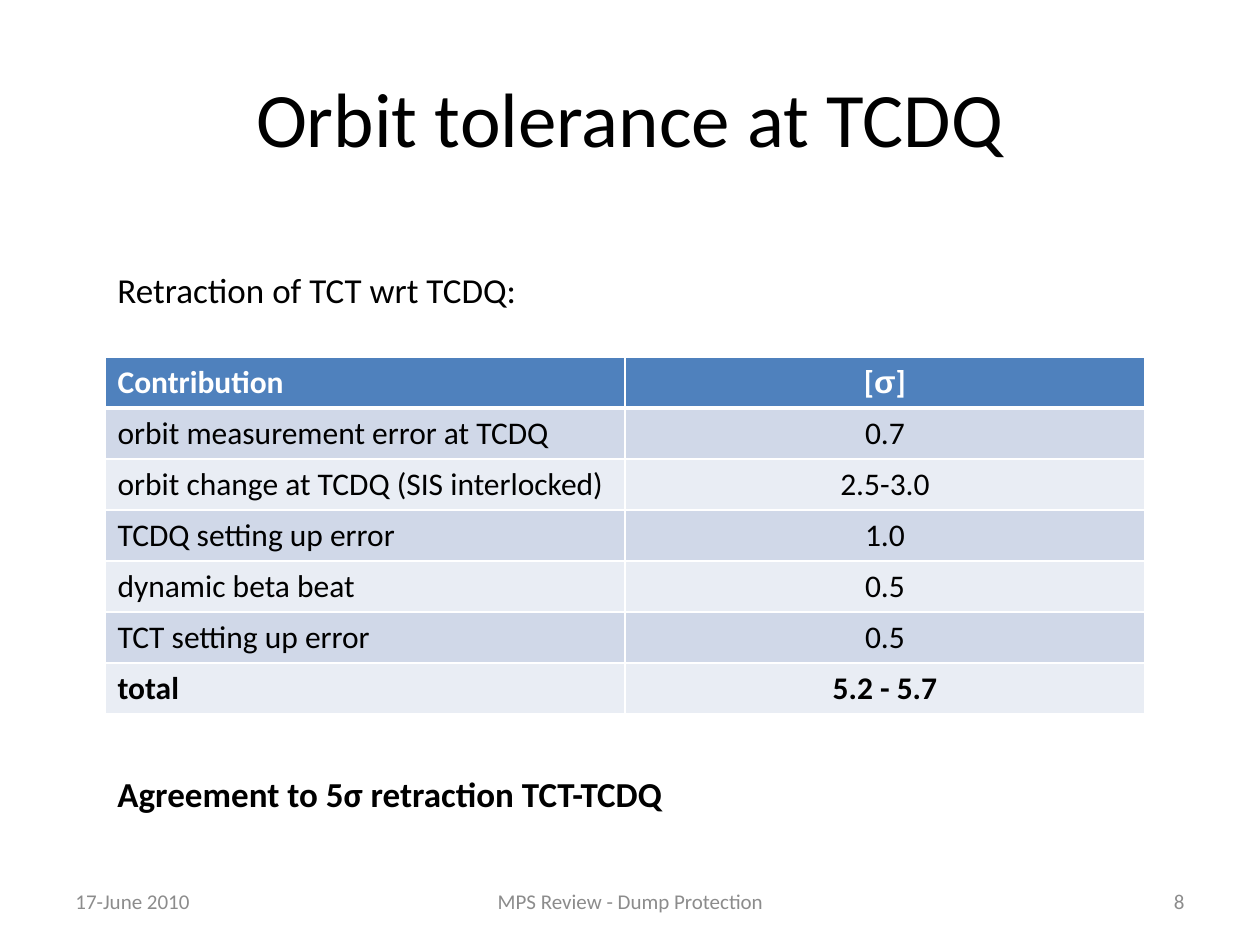
import pptx
import pptx.util
import pptx.dml.color
import pptx.enum.text
import pptx.oxml
import pptx.oxml.ns
import lxml.etree

ALIGN = pptx.enum.text.PP_ALIGN
ANCHOR = pptx.enum.text.MSO_ANCHOR

# Content
TITLE = "Orbit tolerance at TCDQ"
INTRO = "Retraction of TCT wrt TCDQ:"
CONCLUSION = "Agreement to 5σ retraction TCT-TCDQ"
ROWS = [
    ("Contribution", "[σ]"),
    ("orbit measurement error at TCDQ", "0.7"),
    ("orbit change at TCDQ (SIS interlocked)", "2.5-3.0"),
    ("TCDQ setting up error", "1.0"),
    ("dynamic beta beat", "0.5"),
    ("TCT setting up error", "0.5"),
    ("total", "5.2 - 5.7"),
]
# Footer: text, left, width, alignment
FOOTER = [
    ("17-June 2010", 63, 294, ALIGN.LEFT),
    ("MPS Review - Dump Protection", 431, 399, ALIGN.CENTER),
    ("8", 903, 294, ALIGN.RIGHT),
]

THEME = {
    "font": "Calibri", "symbol_font": "Arial",
    "ink": "000000", "muted": "8C8C8C", "white": "FFFFFF",
    "header": "4F81BD", "bands": ("E9EDF4", "D0D8E8"),
    "title": 44, "body": 20, "cell": 18, "footer": 12,
}

# Layout in px, 126 to the inch
SLIDE_WIDTH, SLIDE_HEIGHT = 1260, 945
TABLE_LEFT, TABLE_TOP = 105, 357
COLUMN_WIDTH, ROW_HEIGHT = 520, 51
NOTE_WIDTH, NOTE_HEIGHT = 798, 55


def px(length):
    return pptx.util.Emu(round(length * 914400 / 126))


def rgb(name):
    return pptx.dml.color.RGBColor.from_string(name)


def write(frame, text, size, color=THEME["ink"], bold=False, align=ALIGN.LEFT,
          symbol=None):
    """Write one paragraph; the symbol character gets the symbol font."""
    para = frame.paragraphs[0]
    para.alignment = align
    if symbol:
        before, after = text.split(symbol)
        parts = [before, symbol, after]
    else:
        parts = [text]
    for part in parts:
        span = para.add_run()
        span.text = part
        span.font.name = THEME["symbol_font" if part == symbol else "font"]
        span.font.size = pptx.util.Pt(size)
        span.font.bold = bold
        span.font.color.rgb = rgb(color)


def add_text(page, text, left, top, width, height, anchor=ANCHOR.TOP, **style):
    box = page.shapes.add_textbox(px(left), px(top), px(width), px(height))
    box.text_frame.word_wrap = True
    box.text_frame.vertical_anchor = anchor
    write(box.text_frame, text, **style)


def add_borders(cell, **widths):
    """Give the cell white borders, inserted ahead of its fill."""
    properties = cell._tc.get_or_add_tcPr()
    for index, (side, width) in enumerate(widths.items()):
        line = lxml.etree.Element(pptx.oxml.ns.qn("a:ln" + side),
                                  w=str(pptx.util.Pt(width)))
        fill = lxml.etree.SubElement(line, pptx.oxml.ns.qn("a:solidFill"))
        lxml.etree.SubElement(fill, pptx.oxml.ns.qn("a:srgbClr"), val=THEME["white"])
        properties.insert(index, line)


def add_contributions(page):
    table = page.shapes.add_table(
        len(ROWS), 2, px(TABLE_LEFT), px(TABLE_TOP),
        px(2 * COLUMN_WIDTH), px(len(ROWS) * ROW_HEIGHT)).table
    for column in table.columns:
        column.width = px(COLUMN_WIDTH)
    for r, row in enumerate(ROWS):
        table.rows[r].height = px(ROW_HEIGHT)
        header = r == 0
        for c, text in enumerate(row):
            cell = table.cell(r, c)
            cell.fill.solid()
            cell.fill.fore_color.rgb = rgb(
                THEME["header"] if header else THEME["bands"][r % 2])
            add_borders(cell, L=1, R=1, T=3 if r == 1 else 1, B=3 if header else 1)
            write(cell.text_frame, text, size=THEME["cell"],
                  color=THEME["white" if header else "ink"],
                  bold=header or r == len(ROWS) - 1,
                  align=ALIGN.CENTER if c else ALIGN.LEFT,
                  symbol="σ" if "σ" in text else None)


def main():
    deck = pptx.Presentation()
    deck.slide_width, deck.slide_height = px(SLIDE_WIDTH), px(SLIDE_HEIGHT)
    page = deck.slides.add_slide(deck.slide_layouts[6])

    # Title
    add_text(page, TITLE, 63, 38, 1134, 157, anchor=ANCHOR.MIDDLE,
             size=THEME["title"], align=ALIGN.CENTER)

    # Table with a note above and below
    add_text(page, INTRO, TABLE_LEFT, 262, NOTE_WIDTH, NOTE_HEIGHT,
             size=THEME["body"])
    add_contributions(page)
    add_text(page, CONCLUSION, TABLE_LEFT, 766, NOTE_WIDTH, NOTE_HEIGHT,
             size=THEME["body"], bold=True)

    # Footer
    for text, left, width, align in FOOTER:
        add_text(page, text, left, 876, width, 50, anchor=ANCHOR.MIDDLE,
                 size=THEME["footer"], color=THEME["muted"], align=align)

    deck.save("out.pptx")


if __name__ == "__main__":
    main()
